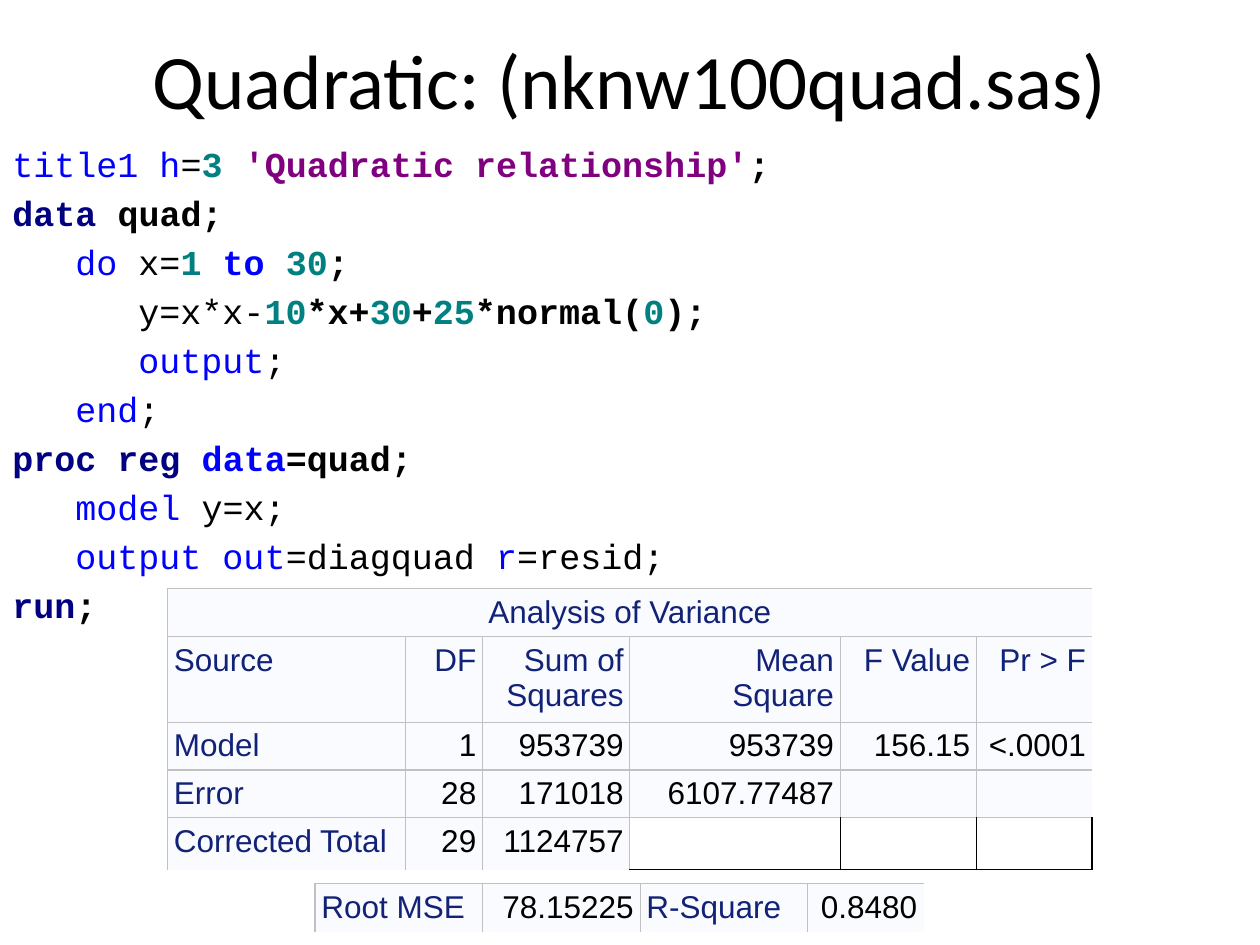
from lxml import etree
from pptx import Presentation
from pptx import util as u
from pptx.dml.color import RGBColor
from pptx.enum import text
from pptx.oxml.ns import qn

COLORS = {
    "black": "000000", "blue": "0000FF", "navy": "000080", "teal": "008080",
    "purple": "800080", "heading": "112277", "cell": "FAFBFE", "grid": "C1C1C1",
}
NO_STYLE = "{2D5ABB26-0587-4C30-8999-92F81FD0307C}"
LEFT, CENTER, RIGHT = text.PP_ALIGN.LEFT, text.PP_ALIGN.CENTER, text.PP_ALIGN.RIGHT

CODE = [
    (0, [("title1 h", "blue", False), ("=", "black", False), ("3 ", "teal", True),
         ("'Quadratic relationship'", "purple", True), (";", "black", True)]),
    (0, [("data", "navy", True), (" quad;", "black", True)]),
    (1, [("do", "blue", False), (" x=", "black", False), ("1 ", "teal", True),
         ("to ", "blue", True), ("30", "teal", True), (";", "black", True)]),
    (2, [("y=x*x-", "black", False), ("10", "teal", True), ("*x+", "black", True),
         ("30", "teal", True), ("+", "black", True), ("25", "teal", True),
         ("*normal(", "black", True), ("0", "teal", True), (");", "black", True)]),
    (2, [("output", "blue", False), (";", "black", False)]),
    (1, [("end", "blue", False), (";", "black", False)]),
    (0, [("proc reg ", "navy", True), ("data", "blue", True), ("=quad;", "black", True)]),
    (1, [("model", "blue", False), (" y=x;", "black", False)]),
    (1, [("output out", "blue", False), ("=diagquad ", "black", False),
         ("r", "blue", False), ("=resid;", "black", False)]),
    (0, [("run", "navy", True), (";", "black", True)]),
]

ANOVA = [
    ["Analysis of Variance", "", "", "", "", ""],
    ["Source", "DF", "Sum of\nSquares", "Mean\nSquare", "F Value", "Pr > F"],
    ["Model", "1", "953739", "953739", "156.15", "<.0001"],
    ["Error", "28", "171018", "6107.77487", "", ""],
    ["Corrected Total", "29", "1124757", "", "", ""],
]
FIT = [["Root MSE", "78.15225", "R-Square", "0.8480"]]


def rgb(name):
    return RGBColor.from_string(COLORS[name])


def style_run(r, font, size, color, bold=False):
    r.font.name = font
    r.font.size = u.Pt(size)
    r.font.bold = bold
    r.font.color.rgb = rgb(color)


def add_box(s, left, top, width, height):
    box = s.shapes.add_textbox(*map(u.Inches, (left, top, width, height)))
    box.text_frame.word_wrap = True
    return box.text_frame


def add_title(s, title):
    tf = add_box(s, 0.5, 0, 9, 1.25)
    tf.vertical_anchor = text.MSO_ANCHOR.MIDDLE
    tf.text = title
    p = tf.paragraphs[0]
    p.alignment = CENTER
    style_run(p.runs[0], "Calibri", 44, "black")


def add_code(s, lines):
    tf = add_box(s, 0, 1.08, 10, 6.42)
    for i, (level, parts) in enumerate(lines):
        p = tf.add_paragraph() if i else tf.paragraphs[0]
        p.space_before = u.Pt(4)
        pPr = p._p.get_or_add_pPr()
        pPr.set("marL", str(u.Inches(0.38 + 0.5 * level)))
        pPr.set("indent", str(u.Inches(-0.38)))
        for words, color, bold in parts:
            r = p.add_run()
            r.text = words
            style_run(r, "Courier New", 20, color, bold)


def set_borders(cell, sides, color, width):
    tcPr = cell._tc.get_or_add_tcPr()
    for side in sides:
        ln = etree.SubElement(tcPr, qn("a:ln" + side), w=str(u.Pt(width)))
        fill = etree.SubElement(ln, qn("a:solidFill"))
        etree.SubElement(fill, qn("a:srgbClr"), val=COLORS[color])


def format_cell(cell, words, color, align):
    cell.margin_left = cell.margin_right = cell.margin_top = u.Inches(0.05)
    cell.margin_bottom = u.Inches(0.03)
    p = cell.text_frame.paragraphs[0]
    p.text = words
    p.alignment = align
    p.font.size = u.Pt(18)
    for r in p.runs:
        style_run(r, "Arial", 18, color)


def add_grid(s, left, top, widths, heights, rows, is_label, first_open=None):
    frame = s.shapes.add_table(len(rows), len(widths), u.Inches(left), u.Inches(top),
                               u.Inches(sum(widths)), u.Inches(sum(heights)))
    table = frame.table
    table.first_row = table.horz_banding = False
    table._tbl.tblPr.find(qn("a:tableStyleId")).text = NO_STYLE
    for column, width in zip(table.columns, widths):
        column.width = u.Inches(width)
    for row, height in zip(table.rows, heights):
        row.height = u.Inches(height)
    last_row, last_column = len(rows) - 1, len(widths) - 1
    for i, row in enumerate(rows):
        for j, words in enumerate(row):
            cell = table.cell(i, j)
            label = is_label(i, j)
            at_left = j == 0 or (label and i == 0)
            format_cell(cell, words, "heading" if label else "black",
                        LEFT if at_left else RIGHT)
            if first_open is not None and i == last_row and j >= first_open:
                sides = ("L" if j > first_open else "") + ("R" if j == last_column else "")
                set_borders(cell, sides + "B", "black", 1)
                cell.fill.background()
            else:
                set_borders(cell, "LT", "grid", 0.75)
                cell.fill.solid()
                cell.fill.fore_color.rgb = rgb("cell")
    return table


def main():
    prs = Presentation()
    prs.slide_width, prs.slide_height = u.Inches(10), u.Inches(7.5)
    s = prs.slides.add_slide(prs.slide_layouts[6])
    add_title(s, "Quadratic: (nknw100quad.sas)")
    add_code(s, CODE)
    anova = add_grid(s, 1.33, 4.67, [1.89, 0.61, 1.17, 1.67, 1.08, 0.92],
                     [0.38, 0.67, 0.38, 0.38, 0.41], ANOVA,
                     is_label=lambda i, j: i < 2 or j == 0, first_open=3)
    anova.cell(0, 0).merge(anova.cell(0, 5))
    anova.cell(0, 0).text_frame.paragraphs[0].alignment = CENTER
    add_grid(s, 2.5, 7.01, [1.33, 1.25, 1.33, 0.92], [0.39], FIT,
             is_label=lambda i, j: j % 2 == 0)
    prs.save("out.pptx")


if __name__ == "__main__":
    main()
